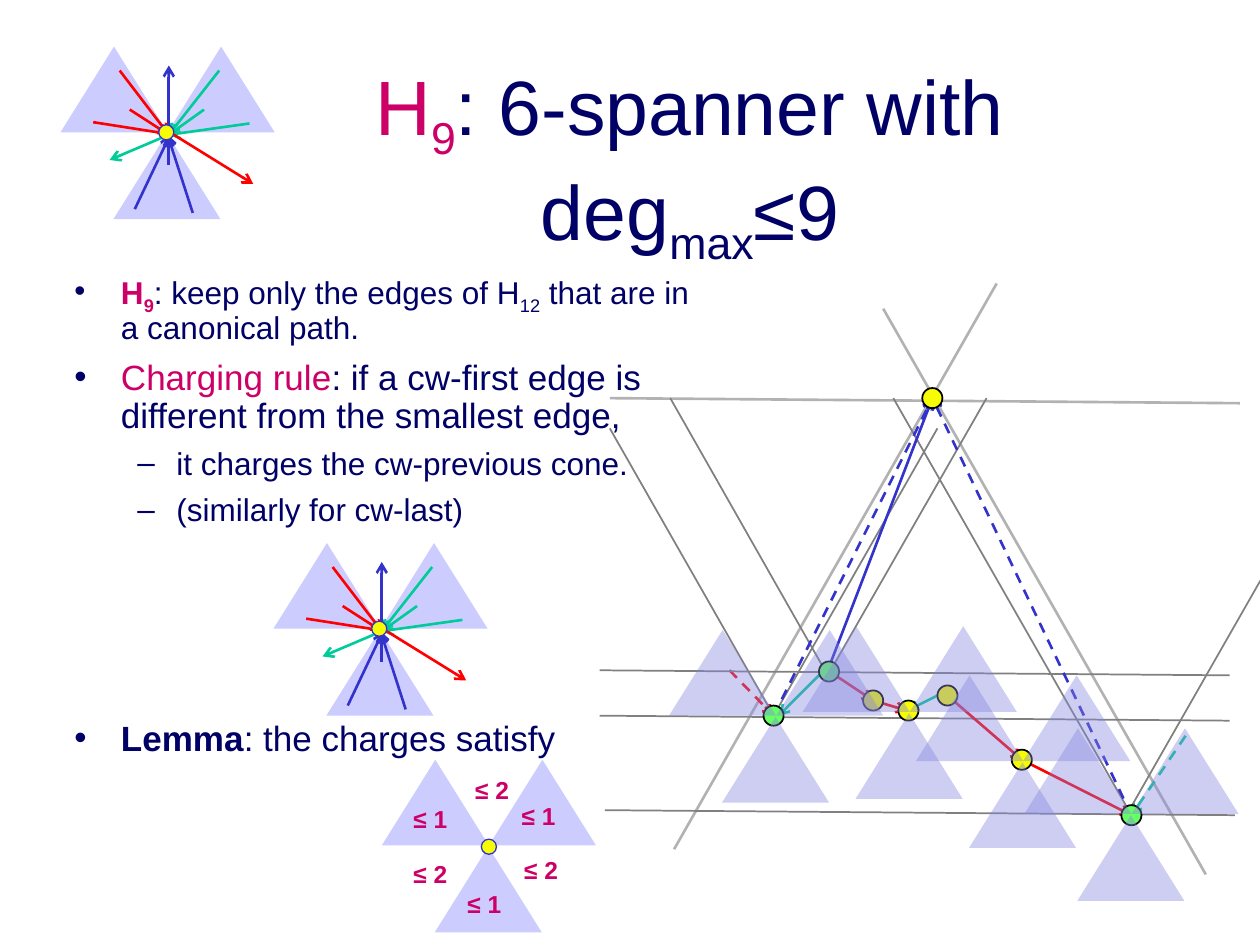
"""Build the H9 spanner slide: cone fans, charging rule and canonical path."""
from lxml import etree
from pptx import Presentation
from pptx.dml.color import RGBColor
from pptx.enum.dml import MSO_LINE
from pptx.enum.shapes import MSO_CONNECTOR, MSO_SHAPE
from pptx.enum.text import MSO_ANCHOR, MSO_AUTO_SIZE, PP_ALIGN
from pptx.oxml.ns import qn
from pptx.util import Inches, Pt

NAVY = RGBColor(0x00, 0x00, 0x66)
MAGENTA = RGBColor(0xCC, 0x00, 0x66)
BLUE = RGBColor(0x33, 0x33, 0xCC)
RED = RGBColor(0xFF, 0x00, 0x00)
TEAL = RGBColor(0x00, 0xCC, 0x99)
SILVER = RGBColor(0xB2, 0xB2, 0xB2)
GRAY = RGBColor(0x80, 0x80, 0x80)
BLACK = RGBColor(0x00, 0x00, 0x00)
YELLOW = RGBColor(0xF6, 0xFC, 0x04)
GREEN = RGBColor(0x66, 0xFF, 0x66)
LAVENDER = RGBColor(0xCC, 0xCC, 0xFF)
VIOLET = RGBColor(0x85, 0x85, 0xE0)
STRAIGHT = MSO_CONNECTOR.STRAIGHT
TRIANGLE, OVAL = MSO_SHAPE.ISOSCELES_TRIANGLE, MSO_SHAPE.OVAL
DASH = MSO_LINE.DASH
CENTER = PP_ALIGN.CENTER
MIDDLE = MSO_ANCHOR.MIDDLE
FIXED, GROW = MSO_AUTO_SIZE.NONE, MSO_AUTO_SIZE.SHAPE_TO_FIT_TEXT

prs = Presentation()
prs.slide_width, prs.slide_height = Inches(10), Inches(7.5)
COL, ROW = prs.slide_width / 10, prs.slide_height / 7.5
s = prs.slides.add_slide(prs.slide_layouts[1])


def add_text(p, text, size=18, color=NAVY, bold=False, sub=False):
    r = p.add_run()
    r.text = text
    r.font.name, r.font.size, r.font.bold = "Arial", Pt(size), bold
    r.font.color.rgb = color
    if sub:
        r._r.get_or_add_rPr().set("baseline", "-25000")


def add_edge(x1, y1, x2, y2, color, width=1.5, dash=False, arrow=True):
    c = s.shapes.add_connector(STRAIGHT, int(x1 * COL), int(y1 * ROW),
                               int(x2 * COL), int(y2 * ROW))
    c.line.color.rgb, c.line.width = color, Pt(width)
    if dash:
        c.line.dash_style = DASH
    if arrow:
        ln = c._element.spPr.find(qn("a:ln"))
        etree.SubElement(ln, qn("a:tailEnd")).set("type", "arrow")
    etree.SubElement(c._element.spPr, qn("a:effectLst"))


for ends in [(9.57, 6.94, 7.01, 2.45), (5.35, 6.74, 7.91, 2.25)]:
    add_edge(*ends, SILVER, arrow=False)
add_edge(9.41, 5.84, 8.98, 6.47, TEAL, dash=True)
add_edge(5.79, 5.32, 6.14, 5.68, RED, dash=True)
for x, y in [(4.76, 5.68), (4.76, 5.32), (4.8, 6.43)]:
    add_edge(x, y, x + 5, y + 0.04, GRAY, 1, arrow=False)

title, body = s.shapes.title, s.placeholders[1]
for sp, (x, y, w, h) in [(title, (1.74, 0.51, 7.47, 1.57)),
                         (body, (0.49, 2.12, 5.18, 4.63))]:
    sp.left, sp.top = int(x * COL), int(y * ROW)
    sp.width, sp.height = int(w * COL), int(h * ROW)
    sp.text_frame.auto_size = FIXED
    sp.text_frame.word_wrap = True

title.text_frame.vertical_anchor = MIDDLE
p = title.text_frame.paragraphs[0]
p.alignment = CENTER
add_text(p, "H", size=44, color=MAGENTA)
add_text(p, "9", size=44, color=MAGENTA, sub=True)
add_text(p, ": 6-spanner with deg", size=44)
add_text(p, "max", size=44, sub=True)
add_text(p, "≤9", size=44)

key = {"color": MAGENTA, "bold": True}
bullets = [
    (0, 8, [("H", key), ("9", {**key, "sub": True}),
            (": keep only the edges of H", {}), ("12", {"sub": True}),
            (" that are in a canonical path.", {})]),
    (0, 8, [("Charging rule", {"size": 20, "color": MAGENTA}),
            (": if a cw-first edge is different from the smallest edge,",
             {"size": 20})]),
    (1, 7, [("it charges the cw-previous cone.", {})]),
    (1, 7, [("(similarly for cw-last)", {})]),
    (0, 110, [("Lemma", {"size": 20, "bold": True}),
              (": the charges satisfy", {"size": 20})]),
]
tf = body.text_frame
for i, (level, before, runs) in enumerate(bullets):
    p = tf.add_paragraph() if i else tf.paragraphs[0]
    p.level, p.line_spacing, p.space_before = level, 0.9, Pt(before)
    pPr = p._p.get_or_add_pPr()
    margin, hanging = [(0.37, 0.37), (0.81, 0.31)][level]
    pPr.set("marL", str(Inches(margin)))
    pPr.set("indent", str(-Inches(hanging)))
    clr = etree.SubElement(pPr, qn("a:buClr"))
    etree.SubElement(clr, qn("a:srgbClr")).set("val", str(NAVY))
    etree.SubElement(pPr, qn("a:buFont")).set("typeface", "Arial")
    etree.SubElement(pPr, qn("a:buChar")).set("char", "•–"[level])
    for text, fmt in runs:
        add_text(p, text, **fmt)

fans = [(3.03, 5.01), (1.34, 1.07)]
light_cones = [(3.88, 6.72, LAVENDER)] + [(x - 0.01, y - 0.01, LAVENDER) for x, y in fans]
dark_cones = [(7.22, 5.66, VIOLET), (6.16, 5.69, VIOLET),
              (8.12, 6.05, VIOLET), (8.98, 6.47, VIOLET)]
cones = [(x + dx, y + dy, fill) for x, y, fill in light_cones + dark_cones
         for dx, dy in [(-0.43, 0), (0, -0.69), (-0.85, -0.69)]]
dots = [(3.88, 6.72, 0.12, YELLOW, BLUE)]
dots += [(x - 0.02, y - 0.02, 0.12, YELLOW, BLUE) for x, y in fans]
dots += [(x, y, 0.16, YELLOW, BLACK) for x, y in
         [(7.4, 3.16), (6.93, 5.56), (7.21, 5.64), (7.52, 5.52), (8.11, 6.03)]]
dots += [(x, y, 0.16, GREEN, BLACK) for x, y in
         [(6.14, 5.68), (6.58, 5.33), (8.98, 6.47)]]
split = 3 * len(light_cones)
triangles = [(TRIANGLE, x, y, 0.85, 0.68, fill, None) for x, y, fill in cones]
ovals = [(OVAL, x - d / 2, y - d / 2, d, d, fill, line)
         for x, y, d, fill, line in dots]

for layer in (triangles[:split], ovals + triangles[split:]):
    for kind, x, y, w, h, fill, line in layer:
        sp = s.shapes.add_shape(kind, int(x * COL), int(y * ROW),
                                int(w * COL), int(h * ROW))
        sp.shadow.inherit = False
        sp.fill.solid()
        sp.fill.fore_color.rgb = fill
        if line:
            sp.line.color.rgb = line
            sp.line.width = Pt(0.75 if line == BLUE else 1)
        else:
            sp.line.fill.background()
        if fill == VIOLET:
            clr = sp._element.spPr.find(qn("a:solidFill"))[0]
            etree.SubElement(clr, qn("a:alpha")).set("val", "40000")
    if layer[0][0] == OVAL:
        continue

    for x, y, text in [(3.11, 7.05, "≤ 1"), (3.54, 6.35, "≤ 1"), (2.68, 6.38, "≤ 1"),
                       (3.17, 6.15, "≤ 2"), (3.56, 6.78, "≤ 2"), (2.68, 6.81, "≤ 2")]:
        tf = s.shapes.add_textbox(int(x * COL), int(y * ROW),
                                  int(0.97 * COL), int(0.29 * ROW)).text_frame
        tf.word_wrap, tf.auto_size = False, GROW
        p = tf.paragraphs[0]
        p.alignment, p.line_spacing, p.space_before = CENTER, 0.8, Pt(6)
        p._p.get_or_add_pPr().set("marL", str(Inches(0.81)))
        p._p.get_or_add_pPr().set("indent", str(-Inches(0.31)))
        add_text(p, text, size=14, **key)

    add_edge(4.84, 3.16, 9.84, 3.2, SILVER, arrow=False)
    for ends in [(6.14, 5.68, 4.84, 3.4), (6.57, 5.36, 5.32, 3.16),
                 (8.98, 6.47, 7.09, 3.16), (6.14, 5.68, 7.44, 3.4),
                 (6.57, 5.36, 7.83, 3.16), (8.94, 6.47, 10.83, 3.16)]:
        add_edge(*ends, GRAY, 1, arrow=False)
    for x, y, dash in [(6.57, 5.32, False), (6.14, 5.68, True), (8.98, 6.47, True)]:
        add_edge(x, y, 7.4, 3.16, BLUE, dash=dash)
    for ends in [(6.57, 5.29, 6.18, 5.68), (7.52, 5.48, 7.2, 5.64)]:
        add_edge(*ends, TEAL)
    for ends in [(6.57, 5.32, 6.93, 5.56), (6.93, 5.56, 7.2, 5.64),
                 (7.52, 5.52, 8.11, 6.03), (8.11, 6.03, 8.98, 6.47)]:
        add_edge(*ends, RED)
    for cx, cy in fans:
        for x1, y1, x2, y2, color in [
                (0, -0.04, 0, -0.55, BLUE), (-0.39, -0.51, 0, 0, RED),
                (0.4, -0.51, 0, 0, TEAL), (-0.31, -0.2, 0, 0, RED),
                (0.28, -0.2, 0, 0, TEAL), (0, 0.24, 0, 0, BLUE),
                (0.64, -0.09, 0, 0, TEAL), (-0.6, -0.1, 0.04, 0, RED),
                (-0.27, 0.59, 0.01, 0, BLUE), (0.19, 0.62, -0.01, 0, BLUE),
                (0.04, 0, 0.67, 0.39, RED), (0, 0, -0.47, 0.2, TEAL)]:
            add_edge(cx + x1, cy + y1, cx + x2, cy + y2, color)

prs.save("out.pptx")
